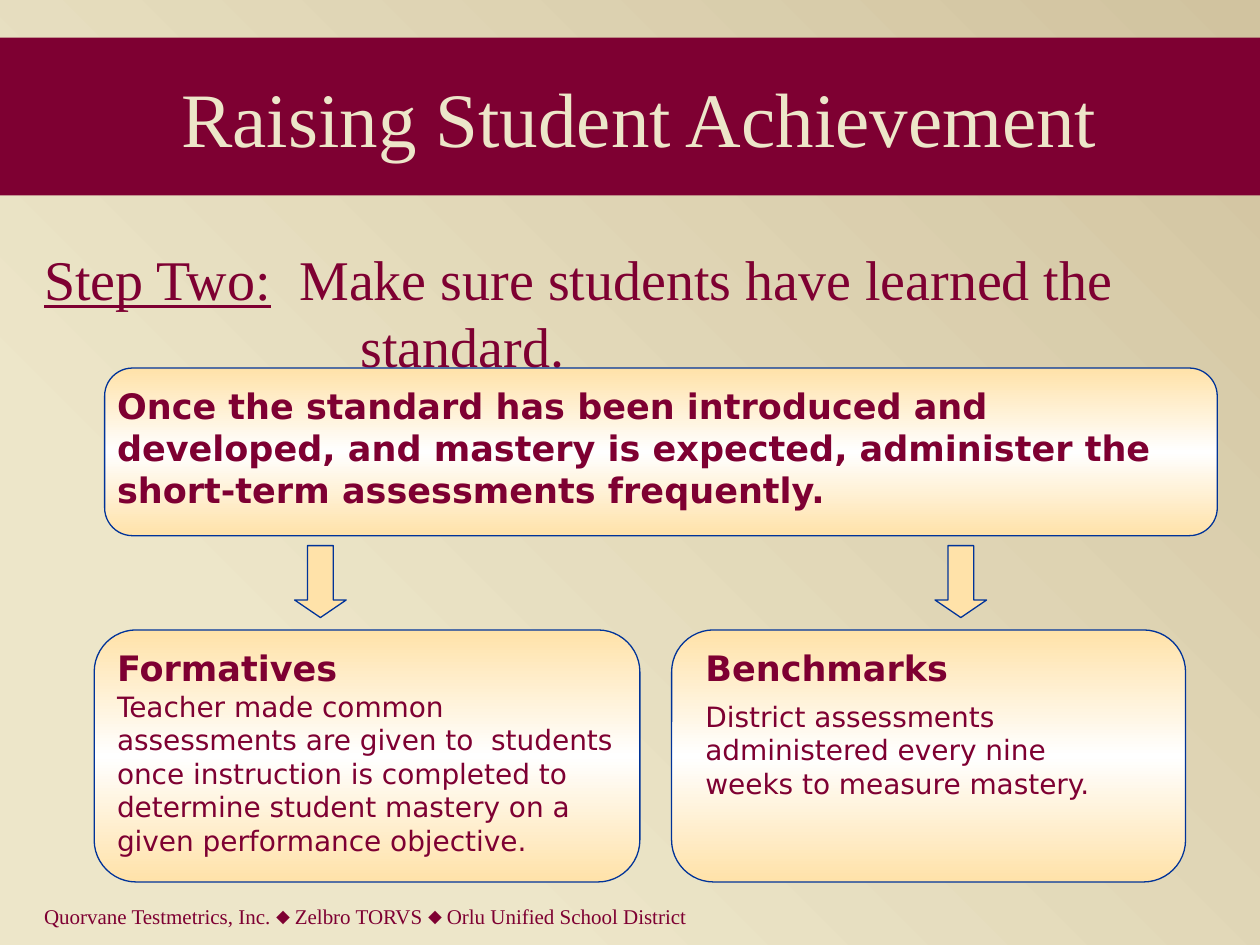
from copy import deepcopy

from pptx import Presentation
from pptx.dml.color import RGBColor
from pptx.enum import shapes, text
from pptx.util import Cm, Pt

SERIF, SANS = "Times New Roman", "DejaVu Sans"
COLORS = {"maroon": "7E0032", "cream": "EDE6C9", "tan": "D1C39F",
          "gold": "FFE2A9", "white": "FFFFFF", "navy": "003399"}

# Content; every place is left, top, width, height in cm
TITLE = " Raising Student Achievement"
STEP = [("Step Two:", True),
        ("  Make sure students have learned the standard.", False)]
FOOTER = "Quorvane Testmetrics, Inc. ⬥ Zelbro TORVS ⬥ Orlu Unified School District"
PANELS = [(2.11, 7.42, 22.43, 3.38), (1.9, 12.7, 11, 5.08), (13.54, 12.7, 10.36, 5.08)]
ARROW_LEFTS = [5.94, 18.85]
HEADINGS = [
    ("Once the standard has been introduced and developed, and mastery is expected, "
     "administer the short-term assessments frequently.", (2.11, 7.62, 22.22, 2.79)),
    ("Formatives", (2.11, 12.9, 5.51, 1.09)),
    ("Benchmarks", (13.97, 12.9, 5.51, 1.09)),
]
DETAILS = [
    ("Teacher made common assessments are given to  students once instruction is "
     "completed to determine student mastery on a given performance objective.",
     (2.11, 13.77, 10.8, 3.66)),
    ("District assessments administered every nine weeks to measure mastery.",
     (13.97, 13.97, 8.46, 2.29)),
]


def color(name):
    return RGBColor.from_string(COLORS[name])


def set_gradient(fill, stops, angle):
    fill.gradient()
    fill.gradient_angle = angle
    first = fill.gradient_stops[0]._gs
    for _ in range(len(stops) - 2):
        first.addnext(deepcopy(first))
    for stop, (position, name) in zip(fill.gradient_stops, stops):
        stop.position = position
        stop.color.rgb = color(name)


def add_shape(slide, kind, place, fill=None, line=None):
    shape = slide.shapes.add_shape(kind, *map(Cm, place))
    shape.shadow.inherit = False
    if fill:
        shape.fill.solid()
        shape.fill.fore_color.rgb = color(fill)
    if line:
        shape.line.color.rgb = color(line)
        shape.line.width = Pt(0.75)
    else:
        shape.line.fill.background()
    return shape


def add_run(paragraph, words, font, size, name="maroon", bold=False, underline=False):
    run = paragraph.add_run()
    run.text = words
    run.font.name, run.font.size = font, Pt(size)
    run.font.bold, run.font.underline = bold, underline
    run.font.color.rgb = color(name)


def add_text_box(slide, place):
    frame = slide.shapes.add_textbox(*map(Cm, place)).text_frame
    frame.word_wrap = True
    return frame.paragraphs[0]


def main():
    presentation = Presentation()
    presentation.slide_width, presentation.slide_height = Cm(25.4), Cm(19.05)
    slide = presentation.slides.add_slide(presentation.slide_layouts[6])
    set_gradient(slide.background.fill, [(0.24, "cream"), (1, "tan")], 45)

    # Title band
    band = add_shape(slide, shapes.MSO_SHAPE.RECTANGLE, (0, 0.76, 25.4, 3.18), "maroon")
    band.text_frame.vertical_anchor = text.MSO_ANCHOR.MIDDLE
    paragraph = band.text_frame.paragraphs[0]
    paragraph.alignment = text.PP_ALIGN.CENTER
    add_run(paragraph, TITLE, SERIF, 44, "cream")

    # Step line with a hanging indent
    paragraph = add_text_box(slide, (0.64, 4.8, 24.76, 2.97))
    properties = paragraph._p.get_or_add_pPr()
    properties.set("marL", str(Cm(6.38)))
    properties.set("indent", str(-Cm(6.38)))
    for words, underline in STEP:
        add_run(paragraph, words, SERIF, 32, underline=underline)

    # Panels
    for place in PANELS:
        panel = add_shape(slide, shapes.MSO_SHAPE.ROUNDED_RECTANGLE, place, line="navy")
        set_gradient(panel.fill, [(0, "gold"), (0.5, "white"), (1, "gold")], 90)

    # Arrows
    for left in ARROW_LEFTS:
        arrow = add_shape(slide, shapes.MSO_SHAPE.DOWN_ARROW,
                          (left, 11, 1.04, 1.45), "gold", "navy")
        arrow.adjustments[1] = 0.34

    # Panel texts
    for items, size, bold in ((HEADINGS, 20, True), (DETAILS, 16, False)):
        for words, place in items:
            add_run(add_text_box(slide, place), words, SANS, size, bold=bold)

    # Footer
    add_run(add_text_box(slide, (0.64, 18.08, 18.62, 0.97)), FOOTER, SERIF, 12)

    presentation.save("out.pptx")


if __name__ == "__main__":
    main()
